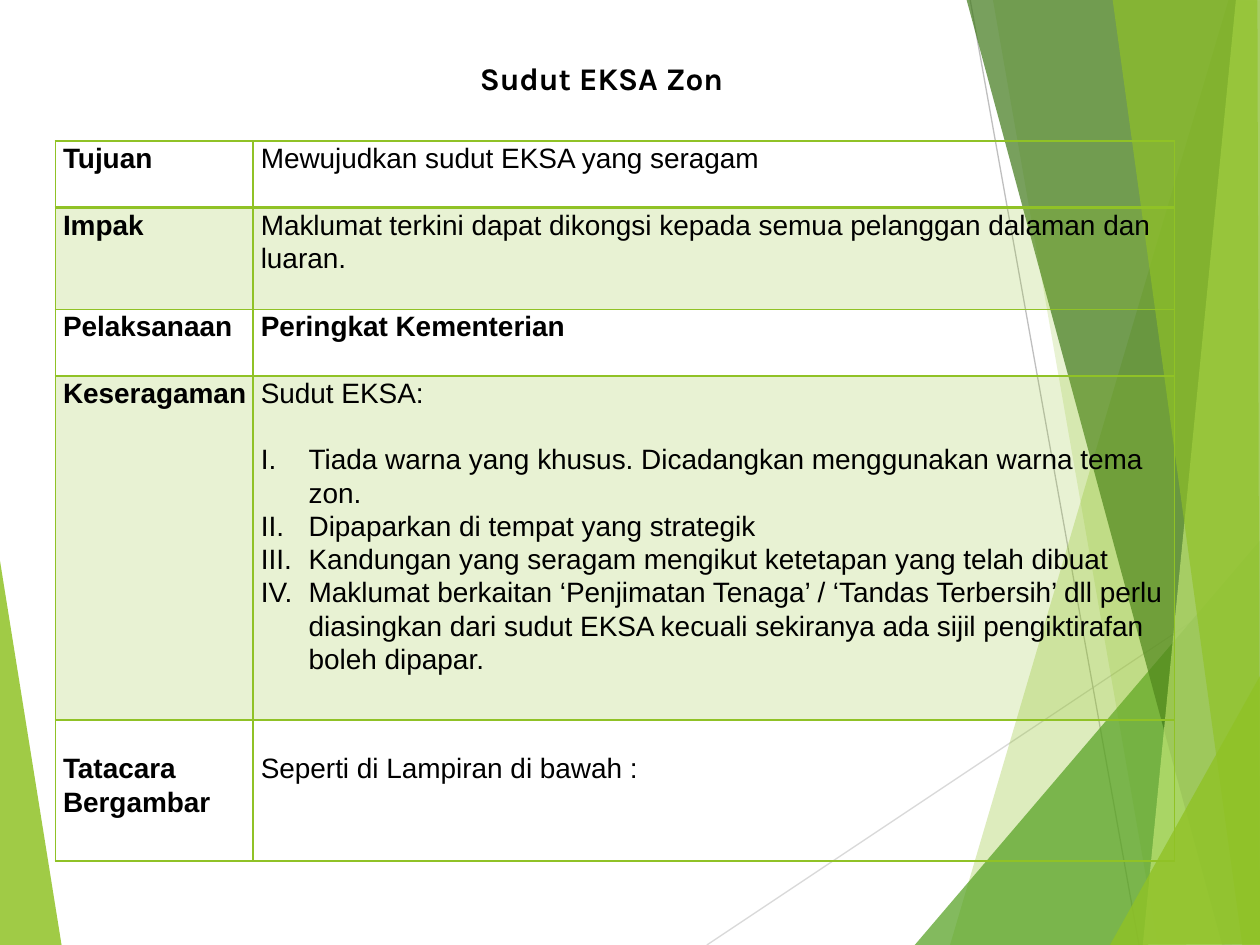
"""Build the Sudut EKSA Zon slide: a five-row table over green facets."""
import dataclasses

import lxml.etree
import pptx
import pptx.dml.color
import pptx.enum.shapes
import pptx.oxml.ns
import pptx.util


@dataclasses.dataclass(frozen=True)
class Theme:
    green: str = "90C226"
    leaf: str = "54A021"
    moss: str = "3F7819"
    lime: str = "C0E474"
    pale: str = "D9D9D9"
    gray: str = "BFBFBF"
    ink: str = "000000"
    face: str = "Arial"
    head: str = "Karla"
    body: int = 16
    title: int = 18


theme = Theme()
rgb = pptx.dml.color.RGBColor.from_string
qn = pptx.oxml.ns.qn
sub = lxml.etree.SubElement


def write(frame, text, first=True, size=theme.body, face=theme.face, bold=False,
          lines=1.07, after=0, roman=False):
    para = frame.paragraphs[0] if first else frame.add_paragraph()
    para.line_spacing = lines
    para.space_after = pptx.util.Pt(after)
    run = para.add_run()
    run.text = text
    run.font.size = pptx.util.Pt(size)
    run.font.name = face
    run.font.bold = bold
    run.font.color.rgb = rgb(theme.ink)
    if roman:
        props = para._p.get_or_add_pPr()
        props.set("marL", str(pptx.util.Inches(0.38)))
        props.set("indent", str(-pptx.util.Inches(0.38)))
        sub(props, qn("a:buFont"), typeface="+mj-lt")
        sub(props, qn("a:buAutoNum"), type="romanUcPeriod")


def tint(fill, props, color, alpha):
    fill.solid()
    fill.fore_color.rgb = rgb(color)
    sub(props.find(qn("a:solidFill")).find(qn("a:srgbClr")), qn("a:alpha"), val=str(alpha * 1000))


deck = pptx.Presentation()
deck.slide_width = pptx.util.Inches(10)
deck.slide_height = pptx.util.Inches(7.5)
wide, high = deck.slide_width / 100, deck.slide_height / 100
slide = deck.slides.add_slide(deck.slide_layouts[6])
shapes = slide.shapes

facets = [
    (theme.green, 85, [(-0.1, 58.5), (4.9, 100.1), (-0.1, 100)]),
    (theme.green, 30, [(97.5, 0), (75.4, 100), (100.2, 100.1), (100.1, 0.1)]),
    (theme.green, 20, [(78.8, -0.1), (91.9, 100), (100.1, 100), (100.1, -0.1)]),
    (theme.leaf, 72, [(72.6, 100), (100, 57.2), (100.1, 100)]),
    (theme.moss, 70, [(76.7, -0.1), (97, 100), (100.1, 99.9), (100.1, -0.1)]),
    (theme.lime, 70, [(98.1, -0.1), (90.7, 100), (100.1, 100), (100, -0.1)]),
    (theme.green, 65, [(88.3, -0.1), (98.6, 100), (100, 100), (99.8, -0.1)]),
    (theme.green, 80, [(88.1, 100), (100.1, 71.3), (100.1, 99.9)]),
]
rays = [(theme.pale, (56.1, 100), (100.1, 60.9)), (theme.gray, (77, 0), (90.4, 100))]

for rank, (color, alpha, points) in enumerate(facets):
    spots = [(x * wide, y * high) for x, y in points]
    build = shapes.build_freeform(*spots[0])
    build.add_line_segments(spots[1:], close=True)
    facet = build.convert_to_shape()
    facet.shadow.inherit = False
    tint(facet.fill, facet._element.spPr, color, alpha)
    facet.line.fill.background()
    if rank == 0:
        for shade, start, end in rays:
            ray = shapes.add_connector(
                pptx.enum.shapes.MSO_CONNECTOR.STRAIGHT,
                *(round(n) for n in (start[0] * wide, start[1] * high, end[0] * wide, end[1] * high)))
            ray.line.color.rgb = rgb(shade)
            ray.line.width = pptx.util.Pt(0.75)
            sub(ray._element.spPr, qn("a:effectLst"))

rows = [
    ("Tujuan", ["Mewujudkan sudut EKSA yang seragam"], 7.07),
    ("Impak", ["Maklumat terkini dapat dikongsi kepada semua pelanggan dalaman dan luaran."], 10.75),
    ("Pelaksanaan", ["Peringkat Kementerian"], 7.07),
    ("Keseragaman", [
        "Sudut EKSA:",
        "Tiada warna yang khusus. Dicadangkan menggunakan warna tema zon.",
        "Dipaparkan di tempat yang strategik",
        "Kandungan yang seragam mengikut ketetapan yang telah dibuat",
        "Maklumat berkaitan ‘Penjimatan Tenaga’ / ‘Tandas Terbersih’ dll perlu diasingkan "
        "dari sudut EKSA kecuali sekiranya ada sijil pengiktirafan boleh dipapar.",
    ], 36.4),
    ("Tatacara Bergambar", ["Seperti di Lampiran di bawah :"], 14.93),
]
tall = sum(row[2] for row in rows)
grid = shapes.add_table(len(rows), 2, round(4.4 * wide), round(14.93 * high),
                        round(88.8 * wide), round(tall * high)).table
grid.first_row = grid.horz_banding = False
for col, share in zip(grid.columns, (15.7, 73.1)):
    col.width = round(share * wide)

for r, (label, body, share) in enumerate(rows):
    grid.rows[r].height = round(share * high)
    for c, texts in enumerate(([label], body)):
        cell = grid.cell(r, c)
        cell.margin_left = pptx.util.Inches(0.06)
        cell.margin_right = pptx.util.Inches(0.06 if c else 0.02)
        cell.margin_top = pptx.util.Inches(0.25 if r == len(rows) - 1 else 0)
        cell.margin_bottom = 0
        props = cell._tc.get_or_add_tcPr()
        if r % 2:
            tint(cell.fill, props, theme.green, 20)
        else:
            cell.fill.background()
        for n, side in enumerate(("lnL", "lnR", "lnT", "lnB")):
            thick = 2 if (r, side) in ((0, "lnB"), (1, "lnT")) else 1
            edge = sub(props, qn("a:" + side), w=str(pptx.util.Pt(thick)))
            sub(sub(edge, qn("a:solidFill")), qn("a:srgbClr"), val=theme.green)
            props.insert(n, edge)
        for n, text in enumerate(texts):
            write(cell.text_frame, text, first=n == 0, bold=c == 0 or r == 2,
                  after=19 if n == 0 and len(texts) > 1 else 0, roman=n > 0)

title = shapes.add_textbox(round(37.1 * wide), round(5.6 * high), round(28.5 * wide), round(5.33 * high))
title.text_frame.word_wrap = True
write(title.text_frame, "Sudut EKSA Zon", size=theme.title, face=theme.head, bold=True, lines=1.0)

deck.save("out.pptx")
